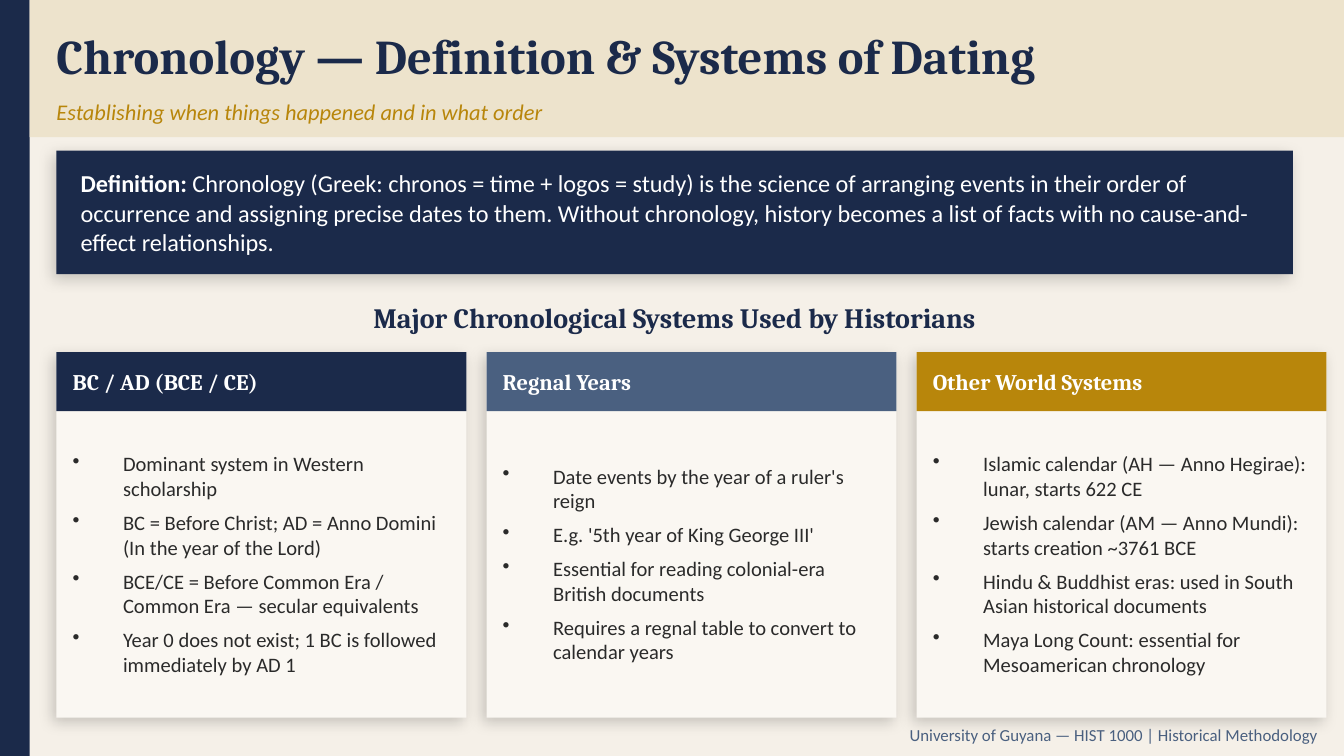
from lxml.etree import SubElement
from pptx import Presentation
from pptx.dml.color import RGBColor
from pptx.enum.shapes import MSO_SHAPE
from pptx.enum.text import MSO_ANCHOR, PP_ALIGN
from pptx.oxml.ns import qn
from pptx.util import Inches, Pt

NAVY = RGBColor(0x1B, 0x2A, 0x4A)
SLATE = RGBColor(0x4A, 0x60, 0x80)
GOLD = RGBColor(0xB8, 0x86, 0x0B)
SAND = RGBColor(0xED, 0xE3, 0xCC)
CREAM = RGBColor(0xF5, 0xF0, 0xE8)
PAPER = RGBColor(0xFA, 0xF7, 0xF2)
INK = RGBColor(0x2A, 0x2A, 0x2A)
WHITE = RGBColor(0xFF, 0xFF, 0xFF)

HEAD, BODY = "Cambria", "Calibri"
WIDTH = 10
HEIGHT = WIDTH * 9 / 16
STRIPE = 0.22
LEFT = 0.42
GAP = 0.15

SYSTEMS = [
    ("BC / AD (BCE / CE)", NAVY, [
        "Dominant system in Western scholarship",
        "BC = Before Christ; AD = Anno Domini (In the year of the Lord)",
        "BCE/CE = Before Common Era / Common Era — secular equivalents",
        "Year 0 does not exist; 1 BC is followed immediately by AD 1",
    ]),
    ("Regnal Years", SLATE, [
        "Date events by the year of a ruler's reign",
        "E.g. '5th year of King George III'",
        "Essential for reading colonial-era British documents",
        "Requires a regnal table to convert to calendar years",
    ]),
    ("Other World Systems", GOLD, [
        "Islamic calendar (AH — Anno Hegirae): lunar, starts 622 CE",
        "Jewish calendar (AM — Anno Mundi): starts creation ~3761 BCE",
        "Hindu & Buddhist eras: used in South Asian historical documents",
        "Maya Long Count: essential for Mesoamerican chronology",
    ]),
]


def add_rect(slide, box, color, shade=False):
    shape = slide.shapes.add_shape(MSO_SHAPE.RECTANGLE, *map(Inches, box))
    shape.fill.solid()
    shape.fill.fore_color.rgb = color
    shape.line.fill.background()
    shape.shadow.inherit = False
    if shade:
        effects = shape._element.spPr.find(qn("a:effectLst"))
        outer = SubElement(effects, qn("a:outerShdw"), blurRad=str(Pt(8)),
                           dist=str(Pt(3)), dir=str(135 * 60000),
                           algn="bl", rotWithShape="0")
        tint = SubElement(outer, qn("a:srgbClr"), val="000000")
        SubElement(tint, qn("a:alpha"), val="18000")


def add_text(slide, box, size, name, color, align=PP_ALIGN.LEFT):
    """Add an empty text frame; return it with its font values."""
    frame = slide.shapes.add_textbox(*map(Inches, box)).text_frame
    values = {"word_wrap": True, "vertical_anchor": MSO_ANCHOR.MIDDLE,
              "margin_left": 0, "margin_top": 0,
              "margin_right": 0, "margin_bottom": 0}
    for key, value in values.items():
        setattr(frame, key, value)
    frame.paragraphs[0].alignment = align
    return frame, {"size": Pt(size), "name": name, "color": color}


def add_run(para, text, style, **extra):
    run = para.add_run()
    run.text = text
    for key, value in {**style, **extra}.items():
        if key == "color":
            run.font.color.rgb = value
        else:
            setattr(run.font, key, value)


def add_line(slide, box, text, size, name, color, align=PP_ALIGN.LEFT, **extra):
    frame, style = add_text(slide, box, size, name, color, align)
    add_run(frame.paragraphs[0], text, style, **extra)


def set_bullet(para):
    indent = Pt(27)
    props = para._p.get_or_add_pPr()
    props.set("marL", str(indent))
    props.set("indent", str(-indent))
    para.space_after = Pt(5)
    SubElement(props, qn("a:buSzPct"), val="100000")
    SubElement(props, qn("a:buChar"), char="•")


def add_header(slide, box):
    x, y, w, h = box
    add_rect(slide, box, SAND)
    add_line(slide, (x + 0.2, y + 0.1, 9, 0.62),
             "Chronology — Definition & Systems of Dating",
             26, HEAD, NAVY, bold=True)
    add_line(slide, (x + 0.2, y + 0.7, 9, 0.26),
             "Establishing when things happened and in what order",
             12, BODY, GOLD, italic=True)


def add_banner(slide, box):
    x, y, w, h = box
    add_rect(slide, box, NAVY, shade=True)
    frame, style = add_text(slide, (x + 0.18, y + 0.05, w - 0.3, h - 0.1),
                            13, BODY, WHITE)
    para = frame.paragraphs[0]
    add_run(para, "Definition: ", style, bold=True)
    add_run(para, "Chronology (Greek: chronos = time + logos = study) is the "
            "science of arranging events in their order of occurrence and "
            "assigning precise dates to them. Without chronology, history "
            "becomes a list of facts with no cause-and-effect relationships.",
            style, bold=False)


def add_card(slide, box, title, color, points):
    x, y, w, h = box
    add_rect(slide, box, PAPER, shade=True)
    add_rect(slide, (x, y, w, 0.44), color)
    add_line(slide, (x + 0.12, y + 0.03, w - 0.23, 0.38), title,
             12, HEAD, WHITE, bold=True)
    frame, style = add_text(slide, (x + 0.12, y + 0.5, w - 0.23, h - 0.57),
                            11, BODY, INK)
    for i, point in enumerate(points):
        para = frame.add_paragraph() if i else frame.paragraphs[0]
        set_bullet(para)
        add_run(para, point, style)


def main():
    deck = Presentation()
    deck.slide_width, deck.slide_height = Inches(WIDTH), Inches(HEIGHT)
    slide = deck.slides.add_slide(deck.slide_layouts[6])
    slide.background.fill.solid()
    slide.background.fill.fore_color.rgb = CREAM

    # Side stripe, header and footer
    add_rect(slide, (0, 0, STRIPE, HEIGHT), NAVY)
    add_header(slide, (STRIPE, 0, WIDTH - STRIPE, 1.02))
    add_line(slide, (0.3, 5.37, 9.5, 0.2),
             "University of Guyana — HIST 1000 | Historical Methodology",
             9, BODY, SLATE, PP_ALIGN.RIGHT)

    # Definition
    add_banner(slide, (LEFT, 1.12, 9.2, 0.92))

    # Dating systems
    add_line(slide, (LEFT, 2.18, 9.2, 0.36),
             "Major Chronological Systems Used by Historians",
             15, HEAD, NAVY, PP_ALIGN.CENTER, bold=True)
    wide = 3.05
    for i, system in enumerate(SYSTEMS):
        add_card(slide, (LEFT + i * (wide + GAP), 2.62, wide, 2.72), *system)

    deck.save("out.pptx")


if __name__ == "__main__":
    main()
